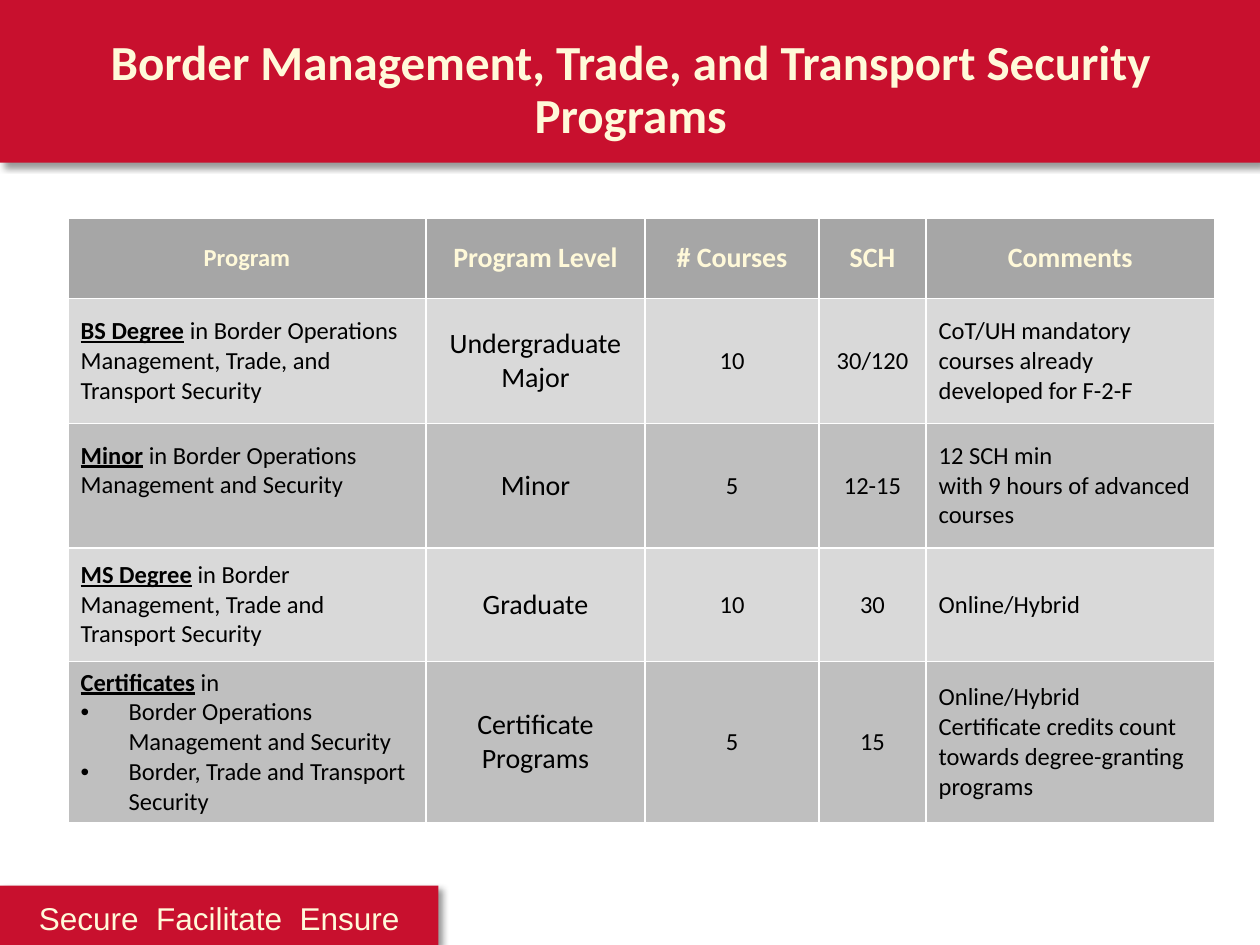
from lxml.etree import SubElement
from pptx import Presentation
from pptx.dml.color import RGBColor
from pptx.enum.shapes import MSO_SHAPE
from pptx.enum.text import MSO_ANCHOR, MSO_AUTO_SIZE, PP_ALIGN
from pptx.oxml import parse_xml
from pptx.oxml.ns import nsdecls, qn
from pptx.util import Inches, Pt

WIDE, HIGH = 10, 7.5
HUES = {"red": "C8102E", "cream": "FFF9D9", "ink": "000000", "line": "FFFFFF",
        "head": "A6A6A6", "light": "D9D9D9", "dark": "BFBFBF"}
COLS = [2.84, 1.74, 1.38, 0.85, 2.29]
ROWS = [0.64, 0.99, 0.99, 0.9, 1.28]
HEADS = ["Program", "Program Level", "# Courses", "SCH", "Comments"]
# Each row: underlined lead, rest of the program, then the other columns
DATA = [
    ("BS Degree", " in Border Operations Management, Trade, and Transport Security",
     "Undergraduate Major", "10", "30/120",
     "CoT/UH mandatory courses already developed for F-2-F"),
    ("Minor", " in Border Operations Management and Security",
     "Minor", "5", "12-15", "12 SCH min\nwith 9 hours of advanced courses"),
    ("MS Degree", " in Border Management, Trade and Transport Security",
     "Graduate", "10", "30", "Online/Hybrid"),
    ("Certificates", " in\n• Border Operations Management and Security\n"
     "• Border, Trade and Transport Security",
     "Certificate Programs", "5", "15",
     "Online/Hybrid\nCertificate credits count towards degree-granting programs"),
]


def color(name):
    return RGBColor.from_string(HUES[name])


def bullet(para):
    """Give a paragraph a hanging bullet."""
    props = para._p.get_or_add_pPr()
    props.set("marL", str(Inches(0.38)))
    props.set("indent", str(-Inches(0.38)))
    SubElement(props, qn("a:buFont")).set("typeface", "Arial")
    SubElement(props, qn("a:buChar")).set("char", "•")


def write(frame, text, lead="", size=14, face="Calibri", hue="ink",
          bold=False, center=False, gap=None):
    """Write lines of text; the lead opens the first one, bold and underlined."""
    frame.word_wrap = True
    for i, line in enumerate(text.split("\n")):
        para = frame.add_paragraph() if i else frame.paragraphs[0]
        para.alignment = PP_ALIGN.CENTER if center else PP_ALIGN.LEFT
        if gap:
            para.line_spacing = gap
        if line.startswith("• "):
            bullet(para)
            line = line[2:]
        parts = [(line, False)]
        if lead and i == 0:
            parts.insert(0, (lead, True))
        for words, strong in parts:
            run = para.add_run()
            run.text = words
            font = run.font
            font.name, font.size = face, Pt(size)
            font.bold = bold or strong
            font.underline = strong
            font.color.rgb = color(hue)


def place(shape, left, top, width, height):
    shape.left, shape.top = Inches(left), Inches(top)
    shape.width, shape.height = Inches(width), Inches(height)


def bar(slide, top, width, height):
    """Add a red bar with a soft shadow, behind the title."""
    shape = slide.shapes.add_shape(MSO_SHAPE.RECTANGLE, 0, 0, 1, 1)
    place(shape, 0, top, width, height)
    shape.fill.solid()
    shape.fill.fore_color.rgb = color("red")
    shape.line.fill.background()
    shape.element.spPr.append(parse_xml(
        f'<a:effectLst {nsdecls("a")}><a:outerShdw blurRad="{Pt(4)}" '
        f'dist="{Pt(3)}" dir="2700000" algn="tl" rotWithShape="0">'
        f'<a:srgbClr val="{HUES["ink"]}"><a:alpha val="40000"/></a:srgbClr>'
        '</a:outerShdw></a:effectLst>'))
    slide.shapes.title.element.addprevious(shape.element)


def style(cell, hue):
    """Set a cell's fill, anchor and borders."""
    cell.vertical_anchor = MSO_ANCHOR.MIDDLE
    cell.fill.solid()
    cell.fill.fore_color.rgb = color(hue)
    props = cell._tc.get_or_add_tcPr()
    for i, side in enumerate("LRTB"):
        props.insert(i, parse_xml(
            f'<a:ln{side} {nsdecls("a")} w="{Pt(1)}"><a:solidFill>'
            f'<a:srgbClr val="{HUES["line"]}"/></a:solidFill></a:ln{side}>'))


def grid(slide):
    """Add the table of programs."""
    table = slide.shapes.add_table(
        len(ROWS), len(COLS), Inches(0.54), Inches(1.73),
        Inches(sum(COLS)), Inches(sum(ROWS))).table
    for col, width in zip(table.columns, COLS):
        col.width = Inches(width)
    for row, height in zip(table.rows, ROWS):
        row.height = Inches(height)
    for c, text in enumerate(HEADS):
        cell = table.cell(0, c)
        style(cell, "head")
        write(cell.text_frame, text, size=16 if c else 14, hue="cream",
              bold=True, center=True)
    for r, (lead, *texts) in enumerate(DATA, 1):
        for c, text in enumerate(texts):
            cell = table.cell(r, c)
            style(cell, "light" if r % 2 else "dark")
            write(cell.text_frame, text, lead="" if c else lead,
                  size=16 if c == 1 else 14, center=c in (1, 2, 3))
    # The minor's name sits one line higher than the middle
    table.cell(2, 0).margin_bottom = Inches(0.29)


def main():
    deck = Presentation()
    deck.slide_width, deck.slide_height = Inches(WIDE), Inches(HIGH)
    slide = deck.slides.add_slide(deck.slide_layouts[5])

    # Header
    bar(slide, 0, WIDE, 1.29)
    title = slide.shapes.title
    place(title, 0.11, 0.31, 9.79, 0.82)
    frame = title.text_frame
    frame.auto_size = MSO_AUTO_SIZE.NONE
    frame.vertical_anchor = MSO_ANCHOR.MIDDLE
    write(frame, "Border Management, Trade, and Transport Security Programs",
          size=28, hue="cream", bold=True, center=True, gap=0.9)

    # Footer
    foot = (7.03, 3.48, 0.47)
    bar(slide, *foot)
    box = slide.shapes.add_textbox(0, 0, 1, 1)
    place(box, 0, *foot)
    write(box.text_frame, "Secure  Facilitate  Ensure", size=18, face="Arial",
          hue="cream", center=True, gap=1.19)

    grid(slide)
    deck.save("out.pptx")


if __name__ == "__main__":
    main()
